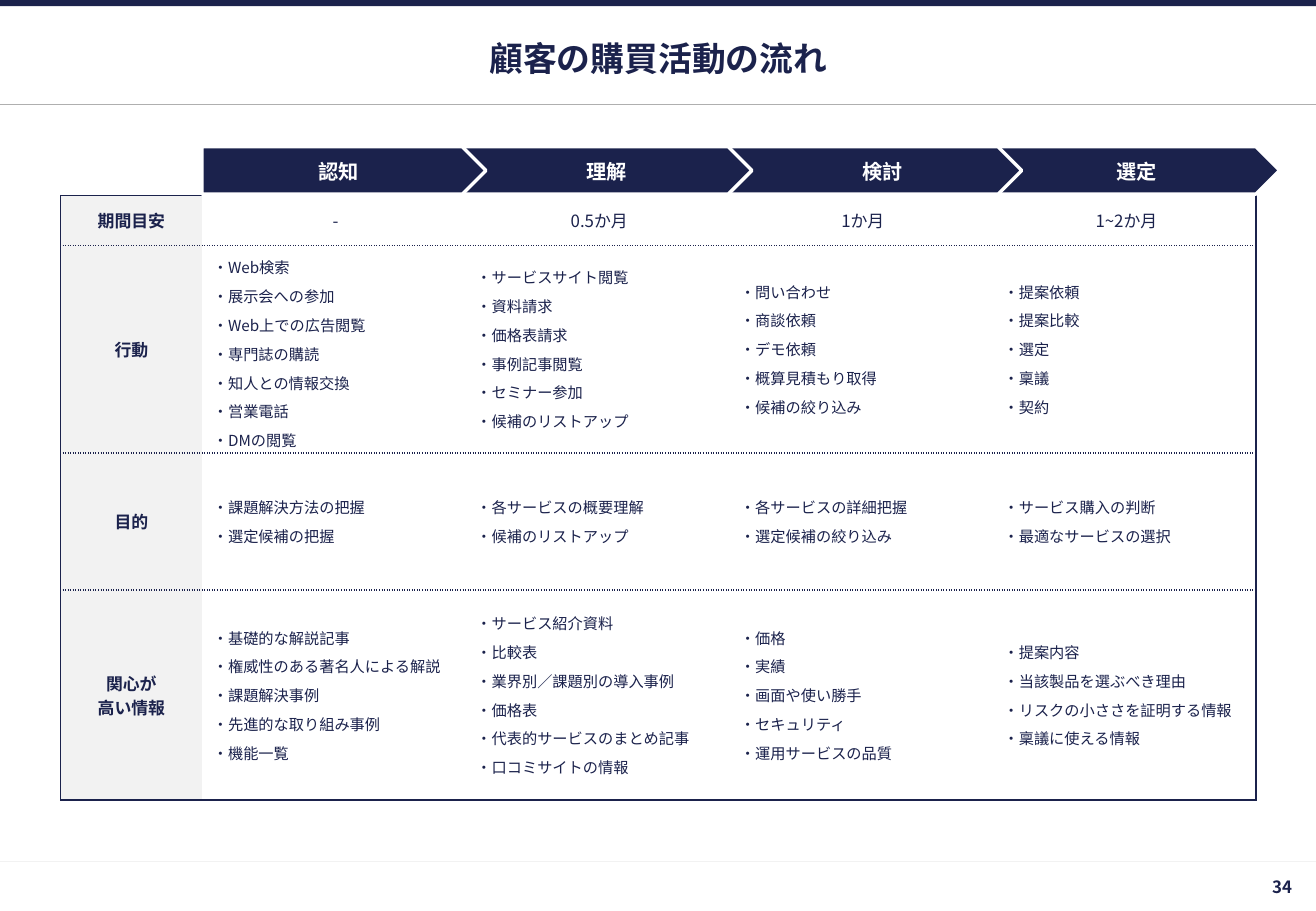
from lxml.etree import SubElement
from pptx import Presentation
from pptx.dml.color import RGBColor
from pptx.enum.shapes import MSO_CONNECTOR, MSO_SHAPE
from pptx.enum.text import MSO_ANCHOR, PP_ALIGN
from pptx.oxml.ns import qn
from pptx.util import Cm, Pt

FONT = "Noto Sans CJK JP"
COLORS = {"navy": "1B224C", "white": "FFFFFF", "rule": "AFAFAF", "pale": "F2F2F2"}
SLIDE_W, SLIDE_H = 27.51, 19.05

TITLE = "顧客の購買活動の流れ"
PAGE_NUMBER = "34"

# stage, arrow left, arrow width, label left, label width
STAGES = [
    ("認知", 4.22, 5.94, 4.45, 5.26),
    ("理解", 9.32, 6.4, 10.13, 5.11),
    ("検討", 14.71, 6.65, 15.93, 5.03),
    ("選定", 20.35, 6.4, 21.62, 4.27),
]
PERIODS = ("期間目安", 1.04, ["-", "0.5か月", "1か月", "1~2か月"])
TOPICS = [
    ("行動", 4.34, [
        ["Web検索", "展示会への参加", "Web上での広告閲覧", "専門誌の購読",
         "知人との情報交換", "営業電話", "DMの閲覧"],
        ["サービスサイト閲覧", "資料請求", "価格表請求", "事例記事閲覧",
         "セミナー参加", "候補のリストアップ"],
        ["問い合わせ", "商談依頼", "デモ依頼", "概算見積もり取得", "候補の絞り込み"],
        ["提案依頼", "提案比較", "選定", "稟議", "契約"],
    ]),
    ("目的", 2.87, [
        ["課題解決方法の把握", "選定候補の把握"],
        ["各サービスの概要理解", "候補のリストアップ"],
        ["各サービスの詳細把握", "選定候補の絞り込み"],
        ["サービス購入の判断", "最適なサービスの選択"],
    ]),
    ("関心が\n高い情報", 4.39, [
        ["基礎的な解説記事", "権威性のある著名人による解説", "課題解決事例",
         "先進的な取り組み事例", "機能一覧"],
        ["サービス紹介資料", "比較表", "業界別／課題別の導入事例", "価格表",
         "代表的サービスのまとめ記事", "口コミサイトの情報"],
        ["価格", "実績", "画面や使い勝手", "セキュリティ", "運用サービスの品質"],
        ["提案内容", "当該製品を選ぶべき理由", "リスクの小ささを証明する情報",
         "稟議に使える情報"],
    ]),
]
TABLE_LEFT, TABLE_TOP = 1.27, 4.09
HEADING_W, STAGE_W = 2.95, 5.51
ARROW_TOP, ARROW_H = 3.07, 0.99
LABEL_TOP, LABEL_H = 3.2, 0.76


def rgb(color):
    return RGBColor.from_string(COLORS[color])


def write(frame, lines, size, color="navy", bold=True, align=PP_ALIGN.CENTER,
          after=0, spacing=None):
    frame.text = "\n".join(lines)
    for paragraph in frame.paragraphs:
        paragraph.alignment = align
        paragraph.space_after = Pt(after)
        if spacing:
            paragraph.line_spacing = spacing
        font = paragraph.font
        font.size, font.bold, font.name = Pt(size), bold, FONT
        font.color.rgb = rgb(color)
        defaults = paragraph._p.pPr.find(qn("a:defRPr"))
        SubElement(defaults, qn("a:ea"), typeface=FONT)


def set_margins(target, left, top, right, bottom):
    target.margin_left, target.margin_top = Cm(left), Cm(top)
    target.margin_right, target.margin_bottom = Cm(right), Cm(bottom)


def add_label(slide, box, margins, text, size, **style):
    frame = slide.shapes.add_textbox(*map(Cm, box)).text_frame
    frame.word_wrap = True
    frame.vertical_anchor = MSO_ANCHOR.MIDDLE
    set_margins(frame, *margins)
    write(frame, [text], size, **style)


def add_block(slide, preset, box):
    block = slide.shapes.add_shape(preset, *map(Cm, box))
    block.shadow.inherit = False
    block.fill.solid()
    block.fill.fore_color.rgb = rgb("navy")
    block.line.fill.background()
    return block


def add_rule(slide, y, color):
    rule = slide.shapes.add_connector(
        MSO_CONNECTOR.STRAIGHT, Cm(0), Cm(y), Cm(SLIDE_W), Cm(y))
    rule.line.color.rgb = rgb(color)
    rule.line.width = Pt(0.75)
    SubElement(rule._element.spPr, qn("a:effectLst"))


def set_borders(cell, **dashes):
    properties = cell._tc.get_or_add_tcPr()
    for side in "LRTB":
        border = SubElement(properties, qn(f"a:ln{side}"), w=str(Pt(1)))
        dash = dashes.get(side)
        if dash:
            fill = SubElement(border, qn("a:solidFill"))
            SubElement(fill, qn("a:srgbClr"), val=COLORS["navy"])
            SubElement(border, qn("a:prstDash"), val=dash)
        else:
            SubElement(border, qn("a:noFill"))


def add_journey_table(slide):
    rows = [PERIODS, *TOPICS]
    last_row, last_col = len(rows) - 1, len(STAGES)
    widths = [HEADING_W] + [STAGE_W] * last_col
    table = slide.shapes.add_table(
        len(rows), len(widths), Cm(TABLE_LEFT), Cm(TABLE_TOP),
        Cm(sum(widths)), Cm(sum(height for _, height, _ in rows))).table
    table.first_row = table.horz_banding = False
    for column, width in zip(table.columns, widths):
        column.width = Cm(width)
    for r, (heading, height, entries) in enumerate(rows):
        table.rows[r].height = Cm(height)
        for c, entry in enumerate([heading, *entries]):
            cell = table.cell(r, c)
            cell.vertical_anchor = MSO_ANCHOR.MIDDLE
            set_margins(cell, 0.23, 0.23, 0.15 if c else 0.23, 0.23)
            set_borders(cell,
                        L=None if c else "solid",
                        R="solid" if c == last_col else None,
                        T="sysDot" if r else "solid",
                        B="solid" if r == last_row else "sysDot")
            if c == 0:
                cell.fill.solid()
                cell.fill.fore_color.rgb = rgb("pale")
            else:
                cell.fill.background()
            if isinstance(entry, list):
                write(cell.text_frame, [f"・{item}" for item in entry], 9,
                      bold=False, align=PP_ALIGN.LEFT, after=4)
            else:
                write(cell.text_frame, entry.split("\n"), 10, bold=c == 0)


def add_stages(slide):
    for i, (_, left, width, _, _) in reversed(list(enumerate(STAGES))):
        preset = MSO_SHAPE.CHEVRON if i else MSO_SHAPE.PENTAGON
        arrow = add_block(slide, preset, (left, ARROW_TOP, width, ARROW_H))
        arrow.line.color.rgb = rgb("white")
        arrow.line.width = Pt(2)
    for stage, _, _, left, width in STAGES:
        add_label(slide, (left, LABEL_TOP, width, LABEL_H), (0.08, 0.08, 0.08, 0),
                  stage, 12, color="white", spacing=0.9)


def main():
    deck = Presentation()
    deck.slide_width, deck.slide_height = Cm(SLIDE_W), Cm(SLIDE_H)
    slide = deck.slides.add_slide(deck.slide_layouts[6])
    add_rule(slide, 18.01, "pale")
    add_block(slide, MSO_SHAPE.RECTANGLE, (0, 0, SLIDE_W, 0.13))
    add_rule(slide, 2.18, "rule")
    add_label(slide, (1.27, 0.66, 24.99, 1.09), (0, 0, 0, 0), TITLE, 20)
    add_journey_table(slide)
    add_stages(slide)
    add_label(slide, (22.6, 18.03, 4.91, 1.02), (0.1, 0.1, 0.5, 0.1),
              PAGE_NUMBER, 10, align=PP_ALIGN.RIGHT)
    deck.save("out.pptx")


if __name__ == "__main__":
    main()
